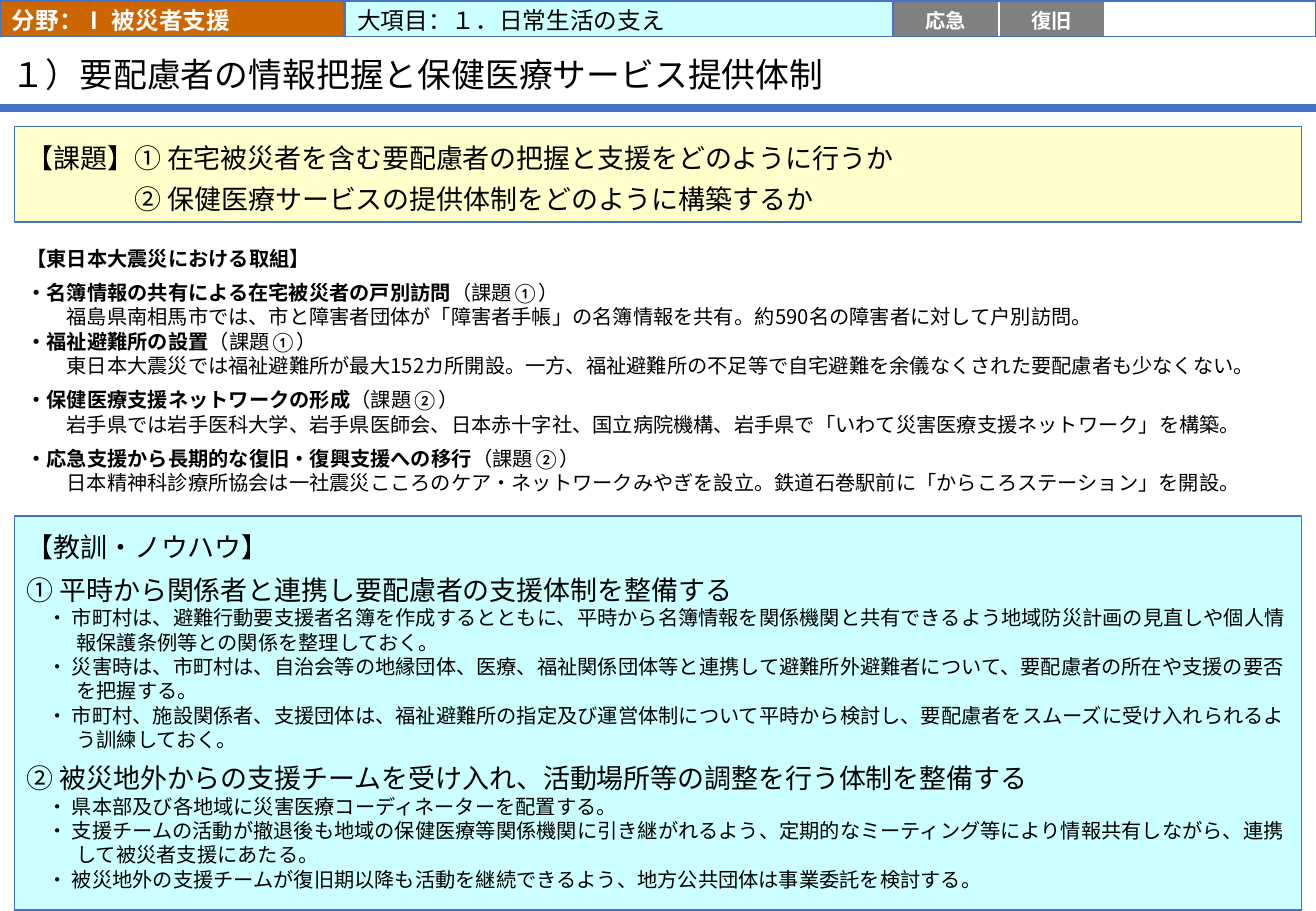
from dataclasses import dataclass

from lxml import etree
from pptx import Presentation
from pptx.dml.color import RGBColor
from pptx.enum.shapes import MSO_CONNECTOR as CONNECTOR, MSO_SHAPE as SHAPE
from pptx.enum.text import MSO_ANCHOR as ANCHOR, PP_ALIGN as ALIGN
from pptx.oxml.ns import qn
from pptx.util import Inches, Pt


@dataclass(frozen=True)
class Theme:
    black: str = "000000"
    white: str = "FFFFFF"
    blue: str = "4472C4"
    orange: str = "CC6600"
    cyan: str = "CCFFFF"
    yellow: str = "FFFFCC"
    grey: str = "808080"
    latin: str = "Calibri"
    gothic: str = "Noto Sans CJK JP"
    title: int = 20
    heading: int = 16
    banner: int = 14
    body: int = 12


THEME = Theme()
SLIDE_WIDTH = 10.83
PANEL_LEFT, PANEL_WIDTH = 0.12, 10.59
BANNER_TOP, BANNER_HEIGHT = 0.01, 0.29
BANNER_INSETS = (0.1, 0.02, 0.1, 0)
PHASES_LEFT, PHASE_WIDTH = 7.35, 0.87
PHASES = ["応急", "復旧", None, None]

ISSUES = [
    ("【課題】① 在宅被災者を含む要配慮者の把握と支援をどのように行うか", 0),
    ("② 保健医療サービスの提供体制をどのように構築するか", 0.89),
]

EFFORTS = [
    ("・名簿情報の共有による在宅被災者の戸別訪問", "（課題①）", 6,
     "福島県南相馬市では、市と障害者団体が「障害者手帳」の名簿情報を共有。"
     "約590名の障害者に対して戸別訪問。"),
    ("・福祉避難所の設置", "（課題①）", 0,
     "東日本大震災では福祉避難所が最大152カ所開設。"
     "一方、福祉避難所の不足等で自宅避難を余儀なくされた要配慮者も少なくない。"),
    ("・保健医療支援ネットワークの形成", "（課題②）", 6,
     "岩手県では岩手医科大学、岩手県医師会、日本赤十字社、国立病院機構、"
     "岩手県で「いわて災害医療支援ネットワーク」を構築。"),
    ("・応急支援から長期的な復旧・復興支援への移行", "（課題②）", 6,
     "日本精神科診療所協会は一社震災こころのケア・ネットワークみやぎを設立。"
     "鉄道石巻駅前に「からころステーション」を開設。"),
]

LESSONS = [
    ("① 平時から関係者と連携し要配慮者の支援体制を整備する", [
        "・ 市町村は、避難行動要支援者名簿を作成するとともに、平時から名簿情報を"
        "関係機関と共有できるよう地域防災計画の見直しや個人情報保護条例等との関係を整理しておく。",
        "・ 災害時は、市町村は、自治会等の地縁団体、医療、福祉関係団体等と連携して"
        "避難所外避難者について、要配慮者の所在や支援の要否を把握する。",
        "・ 市町村、施設関係者、支援団体は、福祉避難所の指定及び運営体制について"
        "平時から検討し、要配慮者をスムーズに受け入れられるよう訓練しておく。",
    ]),
    ("② 被災地外からの支援チームを受け入れ、活動場所等の調整を行う体制を整備する", [
        "・ 県本部及び各地域に災害医療コーディネーターを配置する。",
        "・ 支援チームの活動が撤退後も地域の保健医療等関係機関に引き継がれるよう、"
        "定期的なミーティング等により情報共有しながら、連携して被災者支援にあたる。",
        "・ 被災地外の支援チームが復旧期以降も活動を継続できるよう、"
        "地方公共団体は事業委託を検討する。",
    ]),
]


def set_frame(frame, insets, anchor):
    frame.word_wrap = True
    frame.vertical_anchor = anchor
    left, top, right, bottom = map(Inches, insets)
    frame.margin_left, frame.margin_top = left, top
    frame.margin_right, frame.margin_bottom = right, bottom


def add_panel(shapes, box, fill=None, line=None,
              insets=(0.1, 0.05, 0.1, 0.05), anchor=ANCHOR.MIDDLE):
    panel = shapes.add_shape(SHAPE.RECTANGLE, *map(Inches, box))
    panel.shadow.inherit = False
    if fill:
        panel.fill.solid()
        panel.fill.fore_color.rgb = RGBColor.from_string(fill)
    else:
        panel.fill.background()
    if line:
        panel.line.color.rgb = RGBColor.from_string(line)
        panel.line.width = Pt(1)
    else:
        panel.line.fill.background()
    set_frame(panel.text_frame, insets, anchor)
    return panel.text_frame


def format_run(run, size, font, color, bold):
    run.font.size = Pt(size)
    run.font.name = font
    run.font.bold = bold
    run.font.color.rgb = RGBColor.from_string(color)
    east_asian = etree.SubElement(run._r.get_or_add_rPr(), qn("a:ea"))
    east_asian.set("typeface", font)


def write(frame, text, size, font=THEME.gothic, color=THEME.black, bold=False,
          tail=None, before=0, margin=0, hanging=0, align=ALIGN.LEFT, spacing=None):
    first = frame.paragraphs[0]
    paragraph = frame.add_paragraph() if first.runs else first
    paragraph.text = text
    if tail:
        paragraph.add_run().text = tail
    for index, run in enumerate(paragraph.runs):
        format_run(run, size, font, color, bold and index == 0)
    paragraph.alignment = align
    paragraph.space_before = Pt(before)
    if spacing:
        paragraph.line_spacing = spacing
    properties = paragraph._p.get_or_add_pPr()
    properties.set("marL", str(Inches(margin)))
    properties.set("indent", str(-Inches(hanging)))


def add_title(shapes):
    rule = shapes.add_connector(CONNECTOR.STRAIGHT, 0, Inches(0.89),
                                Inches(SLIDE_WIDTH), Inches(0.89))
    rule.line.color.rgb = RGBColor.from_string(THEME.blue)
    rule.line.width = Pt(4.5)
    etree.SubElement(rule._element.spPr, qn("a:effectLst"))
    title = shapes.add_textbox(*map(Inches, (0, 0.32, 9.48, 0.58))).text_frame
    set_frame(title, (0.1, 0.04, 0.1, 0), ANCHOR.MIDDLE)
    write(title, "１）要配慮者の情報把握と保健医療サービス提供体制",
          THEME.title, spacing=0.9)


def add_banner(shapes):
    field = add_panel(shapes, (0, BANNER_TOP, 2.83, BANNER_HEIGHT),
                      THEME.orange, THEME.blue, BANNER_INSETS)
    write(field, "分野：Ⅰ 被災者支援", THEME.banner, THEME.latin, THEME.white, True)
    topic = add_panel(shapes, (2.84, BANNER_TOP, 4.53, BANNER_HEIGHT),
                      THEME.cyan, THEME.blue, BANNER_INSETS)
    write(topic, "大項目：１．日常生活の支え", THEME.banner, THEME.latin)


def add_phases(shapes):
    group = shapes.add_group_shape().shapes
    for index, phase in enumerate(PHASES):
        cell = add_panel(
            group,
            (PHASES_LEFT + index * PHASE_WIDTH, BANNER_TOP, PHASE_WIDTH, BANNER_HEIGHT),
            THEME.grey if phase else THEME.white, THEME.white, (0, 0.02, 0, 0))
        if phase:
            write(cell, phase, THEME.body, THEME.latin, THEME.white, True,
                  align=ALIGN.CENTER)
    add_panel(group, (PHASES_LEFT, BANNER_TOP, PHASE_WIDTH * len(PHASES), BANNER_HEIGHT),
              line=THEME.blue)


def add_issues(shapes):
    issues = add_panel(shapes, (PANEL_LEFT, 1.04, PANEL_WIDTH, 0.79),
                       THEME.yellow, THEME.blue, (0.1, 0.12, 0.1, 0.12))
    for issue, margin in ISSUES:
        write(issues, issue, THEME.heading, margin=margin, spacing=Pt(24))


def add_efforts(shapes):
    efforts = add_panel(shapes, (PANEL_LEFT, 1.84, PANEL_WIDTH, 2.42), THEME.white)
    write(efforts, "【東日本大震災における取組】", THEME.body, THEME.latin, bold=True)
    for effort, issue, before, detail in EFFORTS:
        write(efforts, effort, THEME.body, THEME.latin, bold=True,
              tail=issue, before=before)
        write(efforts, detail, THEME.body, margin=0.33)


def add_lessons(shapes):
    lessons = add_panel(shapes, (PANEL_LEFT, 4.25, PANEL_WIDTH, 3.24),
                        THEME.cyan, THEME.blue, (0.1, 0.12, 0.1, 0), ANCHOR.TOP)
    write(lessons, "【教訓・ノウハウ】", THEME.heading)
    for lesson, actions in LESSONS:
        write(lessons, lesson, THEME.heading, before=6)
        for action in actions:
            write(lessons, action, THEME.body, margin=0.41, hanging=0.24)


def main():
    deck = Presentation()
    deck.slide_width, deck.slide_height = Inches(SLIDE_WIDTH), Inches(7.5)
    shapes = deck.slides.add_slide(deck.slide_layouts[6]).shapes
    for add_part in (add_title, add_efforts, add_lessons, add_banner,
                     add_issues, add_phases):
        add_part(shapes)
    deck.save("out.pptx")


if __name__ == "__main__":
    main()
